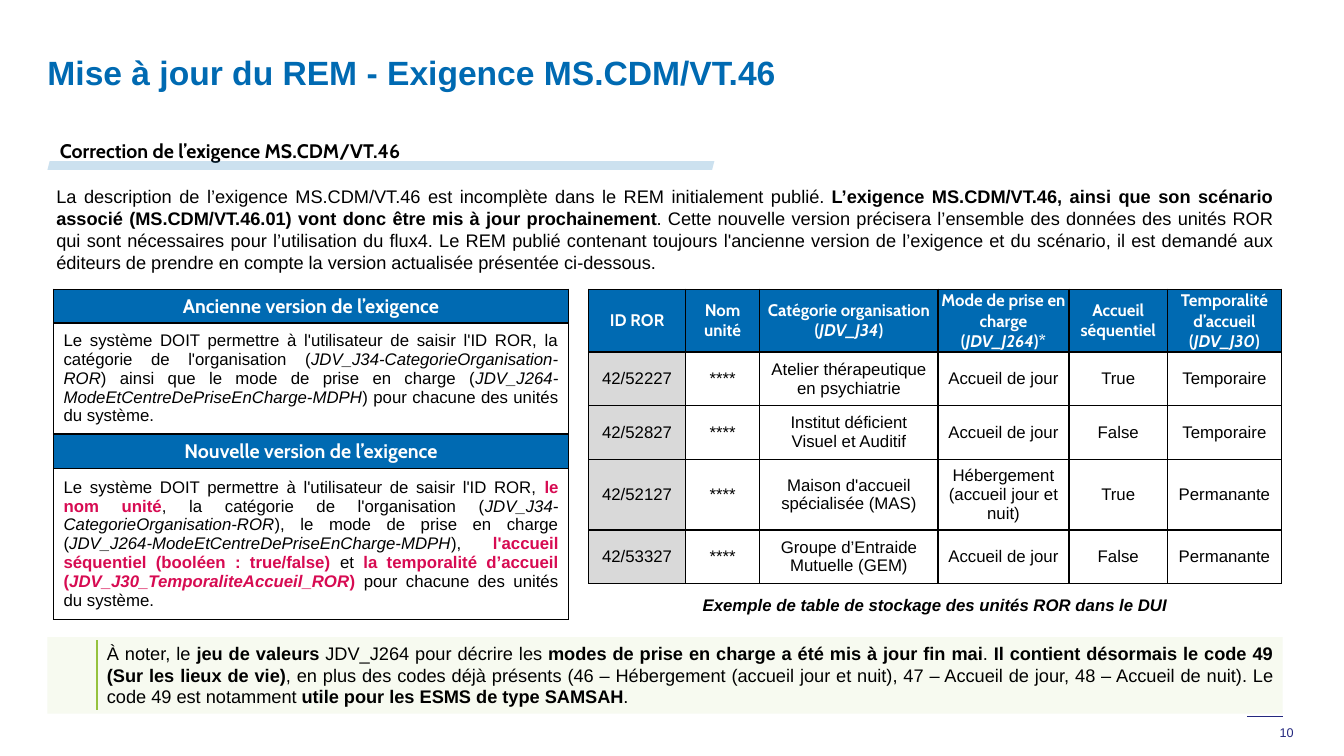
import dataclasses

import lxml.etree
import pptx
import pptx.dml.color
import pptx.enum.shapes
import pptx.enum.text
import pptx.oxml.ns
import pptx.util

ALIGN = pptx.enum.text.PP_ALIGN
ANCHOR = pptx.enum.text.MSO_ANCHOR
SHAPE = pptx.enum.shapes.MSO_SHAPE
SLIDE_WIDTH = pptx.util.Inches(13.33)
SLIDE_HEIGHT = pptx.util.Inches(7.5)


@dataclasses.dataclass(frozen=True)
class Theme:
    """Colours, fonts and type sizes of the deck."""
    blue: str = "006AB2"
    navy: str = "23277E"
    accent: str = "D70B52"
    green: str = "95C23D"
    pale: str = "F7FAF0"
    grey: str = "D9D9D9"
    black: str = "000000"
    white: str = "FFFFFF"
    text_font: str = "Arial"
    head_font: str = "Cabin"
    title: int = 24
    heading: int = 14
    body: int = 13
    cell: int = 12
    number: int = 9


THEME = Theme()


@dataclasses.dataclass(frozen=True)
class Box:
    """A region of the slide, in EMU."""
    left: int
    top: int
    width: int
    height: int

    def share(self, left, top, width, height):
        """Return a region given as shares of this one."""
        return Box(int(self.left + left * self.width), int(self.top + top * self.height),
                   int(width * self.width), int(height * self.height))

    def bounds(self):
        """Return left, top, width and height."""
        return dataclasses.astuple(self)


def percent(left, top, width, height):
    """Return a region given in percent of the slide."""
    return Box(0, 0, SLIDE_WIDTH, SLIDE_HEIGHT).share(left / 100, top / 100, width / 100, height / 100)


def color(value):
    """Return the colour object of a hex value."""
    return pptx.dml.color.RGBColor.from_string(value)


def paint(fill, value):
    """Make a fill solid."""
    fill.solid()
    fill.fore_color.rgb = color(value)


def write(frame, spans, size, ink=THEME.black, font=THEME.text_font, align=ALIGN.LEFT, bold=False, italic=False):
    """Write one paragraph; spans are (text, marks), marks being b, i and a (accent)."""
    frame.word_wrap = True
    para = frame.paragraphs[0]
    para.alignment = align
    para.font.size = pptx.util.Pt(size)
    para.font.name = font
    para.font.color.rgb = color(ink)
    para.font.bold = bold
    para.font.italic = italic
    for text, marks in [(spans, "")] if isinstance(spans, str) else spans:
        span = para.add_run()
        span.text = text
        if "b" in marks:
            span.font.bold = True
        if "i" in marks:
            span.font.italic = True
        if "a" in marks:
            span.font.color.rgb = color(THEME.accent)
    return para


def set_margins(target, left, top, right, bottom):
    """Set the inner margins of a frame or cell, in inches."""
    target.margin_left = pptx.util.Inches(left)
    target.margin_top = pptx.util.Inches(top)
    target.margin_right = pptx.util.Inches(right)
    target.margin_bottom = pptx.util.Inches(bottom)


def add_plain(page, kind, box, fill=None):
    """Add a preset shape without line or shadow."""
    shape = page.shapes.add_shape(kind, *box.bounds())
    shape.shadow.inherit = False
    shape.line.fill.background()
    if fill:
        paint(shape.fill, fill)
    else:
        shape.fill.background()
    return shape


def add_rule(page, box, ink, weight):
    """Draw a straight line across a flat or thin box."""
    rule = page.shapes.add_connector(pptx.enum.shapes.MSO_CONNECTOR.STRAIGHT, box.left, box.top,
                                     box.left + box.width, box.top + box.height)
    rule.line.color.rgb = color(ink)
    rule.line.width = pptx.util.Pt(weight)
    lxml.etree.SubElement(rule._element.spPr, pptx.oxml.ns.qn("a:effectLst"))


def add_text(page, box, spans, size, **style):
    """Add a wrapping text box."""
    frame = page.shapes.add_textbox(*box.bounds()).text_frame
    write(frame, spans, size, **style)
    return frame


def add_grid(page, box, columns, rows):
    """Add an unstyled table whose columns and rows share the box by weight."""
    table = page.shapes.add_table(len(rows), len(columns), *box.bounds()).table
    table.first_row = table.horz_banding = False
    for column, weight in zip(table.columns, columns):
        column.width = int(box.width * weight / sum(columns))
    for row, weight in zip(table.rows, rows):
        row.height = int(box.height * weight / sum(rows))
    return table


def fill_cell(cell, spans, size, fill, **style):
    """Border, fill and write one table cell."""
    properties = cell._tc.get_or_add_tcPr()
    for edge in ("lnL", "lnR", "lnT", "lnB"):
        line = lxml.etree.SubElement(properties, pptx.oxml.ns.qn(f"a:{edge}"), w=str(pptx.util.Pt(1)))
        solid = lxml.etree.SubElement(line, pptx.oxml.ns.qn("a:solidFill"))
        lxml.etree.SubElement(solid, pptx.oxml.ns.qn("a:srgbClr"), val=THEME.black)
    paint(cell.fill, fill)
    cell.vertical_anchor = ANCHOR.MIDDLE
    write(cell.text_frame, spans, size, **style)


def fill_header(cell, spans, size):
    """Style one blue header cell."""
    fill_cell(cell, spans, size, THEME.blue, ink=THEME.white, font=THEME.head_font, align=ALIGN.CENTER, bold=True)


def place_title(page, box, text):
    """Place the title placeholder."""
    title = page.shapes.title
    title.left, title.top, title.width, title.height = box.bounds()
    set_margins(title.text_frame, 0, 0, 0, 0)
    title.text_frame.vertical_anchor = ANCHOR.BOTTOM
    write(title.text_frame, text, THEME.title, ink=THEME.blue, bold=True)


def place_heading(page, box, text):
    """Place a section heading with its slanted underline."""
    frame = add_plain(page, SHAPE.ROUNDED_RECTANGLE, box).text_frame
    frame.vertical_anchor = ANCHOR.MIDDLE
    write(frame, text, THEME.heading, font=THEME.head_font, bold=True)
    bar = add_plain(page, SHAPE.PARALLELOGRAM, box.share(0, 0.69, 0.96, 0.17), THEME.blue)
    tint = bar._element.spPr.find(f".//{pptx.oxml.ns.qn('a:srgbClr')}")
    lxml.etree.SubElement(tint, pptx.oxml.ns.qn("a:alpha"), val="20000")


def place_version(page, box, head, spans, head_share):
    """Place one version of the requirement under its header."""
    table = add_grid(page, box, [1], [head_share, 1 - head_share])
    fill_header(table.cell(0, 0), head, THEME.heading)
    fill_cell(table.cell(1, 0), spans, THEME.cell, THEME.white, align=ALIGN.JUSTIFY)


def place_units(page, box, heads, records, caption):
    """Place the table of units and its caption."""
    table = add_grid(page, box, [0.96, 0.74, 1.77, 1.3, 0.98, 1.13], [0.62, 0.53, 0.53, 0.7, 0.53])
    for column, head in enumerate(heads):
        set_margins(table.cell(0, column), 0.03, 0.01, 0.03, 0.01)
        fill_header(table.cell(0, column), head, THEME.cell)
    for row, record in enumerate(records, 1):
        for column, text in enumerate(record):
            fill = THEME.white if column else THEME.grey
            fill_cell(table.cell(row, column), text, THEME.cell, fill, align=ALIGN.CENTER)
    add_text(page, box.share(0, 1.02, 1, 0.1), caption, THEME.cell, align=ALIGN.CENTER, bold=True, italic=True)


def place_note(page, box, spans):
    """Place the pale note with its green rule."""
    frame = add_plain(page, SHAPE.RECTANGLE, box, THEME.pale).text_frame
    set_margins(frame, 0.59, 0.05, 0.1, 0.05)
    frame.vertical_anchor = ANCHOR.TOP
    write(frame, spans, THEME.body, align=ALIGN.JUSTIFY).space_after = pptx.util.Pt(6)
    add_rule(page, box.share(0.04, 0.04, 0, 0.91), THEME.green, 1.5)


def place_number(page, box, text):
    """Place the page number under its short rule."""
    frame = add_text(page, box, text, THEME.number, ink=THEME.navy, align=ALIGN.RIGHT)
    set_margins(frame, 0, 0, 0, 0)
    frame.vertical_anchor = ANCHOR.BOTTOM
    add_rule(page, box.share(0, -0.04, 0.78, 0), THEME.navy, 0.5)


def main():
    """Build the deck."""
    deck = pptx.Presentation()
    deck.slide_width, deck.slide_height = SLIDE_WIDTH, SLIDE_HEIGHT
    page = deck.slides.add_slide(deck.slide_layouts[5])
    opening = "Le système DOIT permettre à l'utilisateur de saisir l'ID ROR, "
    closing = "pour chacune des unités du système."
    category = ("JDV_J34-CategorieOrganisation-ROR", "i")
    care_mode = ("JDV_J264-ModeEtCentreDePriseEnCharge-MDPH", "i")
    place_title(page, percent(3.53, 4, 76.74, 8.27), "Mise à jour du REM - Exigence MS.CDM/VT.46")
    place_heading(page, percent(3.53, 16.53, 51.69, 6.93), "Correction de l’exigence MS.CDM/VT.46")
    add_text(page, percent(3.45, 23.87, 91.97, 13.07), [
        ("La description de l’exigence MS.CDM/VT.46 est incomplète dans le REM initialement publié. ", ""),
        ("L’exigence MS.CDM/VT.46, ainsi que son scénario associé (MS.CDM/VT.46.01) vont donc être mis à jour prochainement", "b"),
        (". Cette nouvelle version précisera l’ensemble des données des unités ROR qui sont nécessaires pour l’utilisation du flux4. Le REM publié contenant toujours l'ancienne version de l’exigence et du scénario, il est demandé aux éditeurs de prendre en compte la version actualisée présentée ci-dessous.", ""),
    ], THEME.body, align=ALIGN.JUSTIFY)
    place_version(page, percent(3.98, 38.27, 38.33, 19.07), "Ancienne version de l’exigence", [
        (opening + "la catégorie de l'organisation (", ""), category,
        (") ainsi que le mode de prise en charge (", ""), care_mode, (") " + closing, "")], 0.23)
    place_version(page, percent(3.98, 57.47, 38.33, 24.4), "Nouvelle version de l’exigence", [
        (opening, ""), ("le nom unité", "ab"), (", la catégorie de l'organisation (", ""), category,
        ("), le mode de prise en charge (", ""), care_mode, ("), ", ""),
        ("l'accueil séquentiel (booléen : true/false) ", "ab"), ("et ", ""),
        ("la temporalité d’accueil (", "ab"), ("JDV_J30_TemporaliteAccueil_ROR", "abi"), (") ", "ab"),
        (closing, "")], 0.18)
    place_units(page, percent(43.81, 38.27, 51.54, 38.93), [
        "ID ROR", "Nom unité", [("Catégorie organisation (", ""), ("JDV_J34", "i"), (")", "")],
        [("Mode de prise en charge (", ""), ("JDV_J264", "i"), (")*", "")], "Accueil séquentiel",
        [("Temporalité d’accueil (", ""), ("JDV_J30", "i"), (")", "")]], [
        ("42/52227", "****", "Atelier thérapeutique en psychiatrie", "Accueil de jour", "True", "Temporaire"),
        ("42/52827", "****", "Institut déficient Visuel et Auditif", "Accueil de jour", "False", "Temporaire"),
        ("42/52127", "****", "Maison d'accueil spécialisée (MAS)", "Hébergement (accueil jour et nuit)", "True", "Permanante"),
        ("42/53327", "****", "Groupe d’Entraide Mutuelle (GEM)", "Accueil de jour", "False", "Permanante"),
    ], "Exemple de table de stockage des unités ROR dans le DUI")
    place_note(page, percent(3.53, 84.27, 91.9, 10.13), [
        ("À noter, le ", ""), ("jeu de valeurs", "b"), (" JDV_J264 pour décrire les ", ""),
        ("modes de prise en charge a été mis à jour fin mai", "b"), (". ", ""),
        ("Il contient désormais le code 49 (Sur les lieux de vie)", "b"),
        (", en plus des codes déjà présents (46 – Hébergement (accueil jour et nuit), 47 – Accueil de jour, 48 – Accueil de nuit). Le code 49 est notamment ", ""),
        ("utile pour les ESMS de type SAMSAH", "b"), (".", "")])
    place_number(page, percent(92.8, 94.93, 3.45, 2.93), "10")
    deck.save("out.pptx")


if __name__ == "__main__":
    main()
